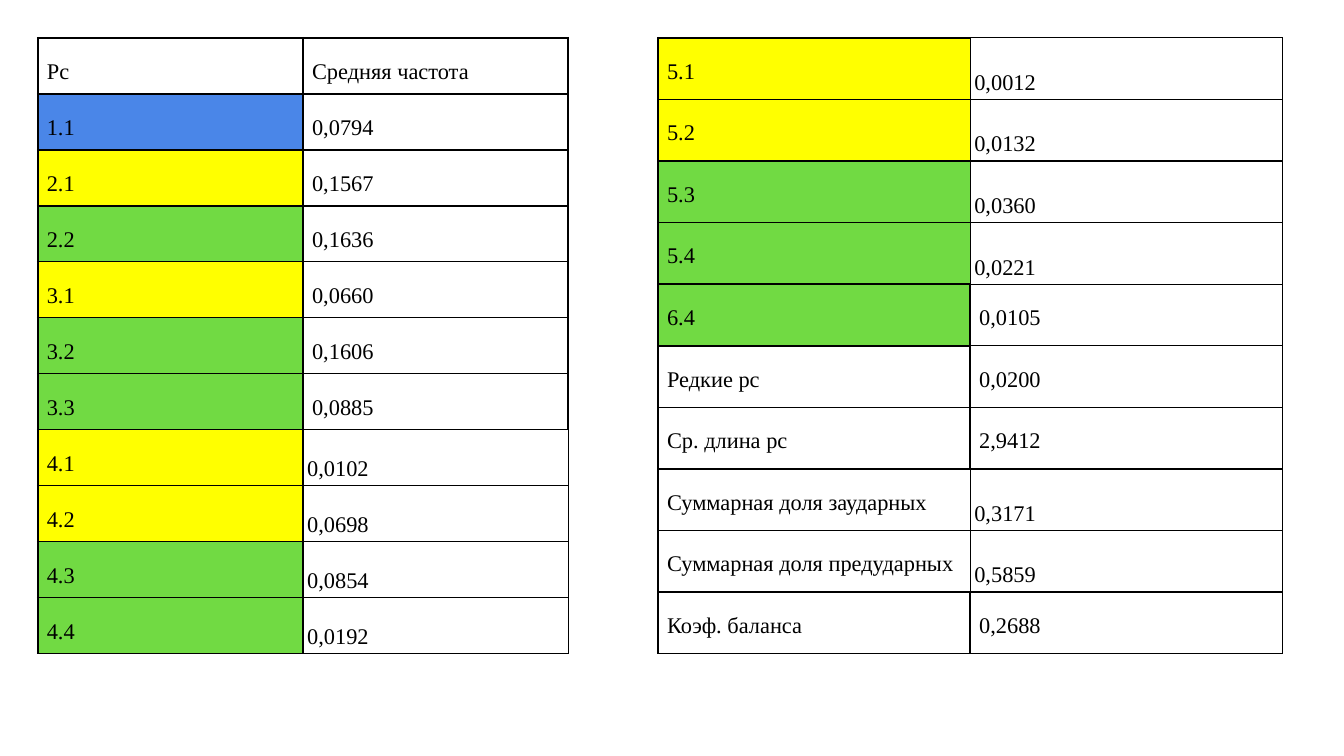
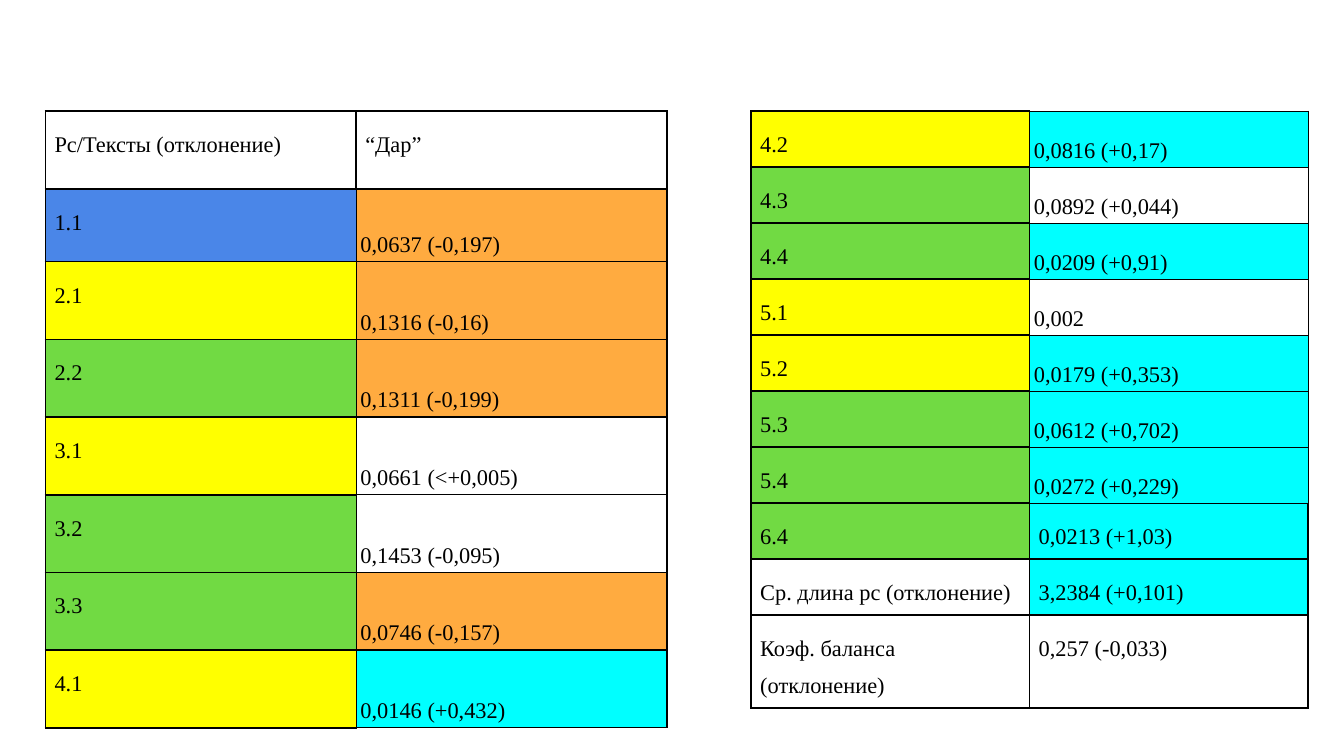
from lxml import etree
from pptx import Presentation
from pptx.dml.color import RGBColor
from pptx.enum.text import MSO_ANCHOR
from pptx.oxml.ns import qn
from pptx.util import Emu, Pt

TOP, BOTTOM = MSO_ANCHOR.TOP, MSO_ANCHOR.BOTTOM

# Scale: 192 px to the inch
PX = 914400 / 192
SLIDE_W, SLIDE_H = 1920, 1080

# Colours
BLACK = RGBColor(0x00, 0x00, 0x00)
WHITE = RGBColor(0xFF, 0xFF, 0xFF)
BLUE = RGBColor(0x4A, 0x86, 0xE8)
YELLOW = RGBColor(0xFF, 0xFF, 0x00)
GREEN = RGBColor(0x71, 0xDA, 0x43)
ORANGE = RGBColor(0xFF, 0xAB, 0x40)
CYAN = RGBColor(0x00, 0xFF, 0xFF)

LABEL_FILLS = {
    BLUE: ["1.1"],
    YELLOW: ["2.1", "3.1", "4.1", "4.2", "5.1", "5.2"],
    GREEN: ["2.2", "3.2", "3.3", "4.3", "4.4", "5.3", "5.4", "6.4"],
}
FILL_OF = {label: fill for fill, labels in LABEL_FILLS.items() for label in labels}

# Value cell kinds: low ones sit at the bottom with a thin frame
PLAIN = {"anchor": TOP, "inset": 13, "spacing": 1.5}
RULED = {**PLAIN, "thin_rules": True}
LOW = {"anchor": BOTTOM, "inset": 6, "spacing": 1.5, "low": True}
TIGHT = {**LOW, "spacing": 1.15}
THIN, THICK = Pt(0.75), Pt(1)


def px(n):
    return Emu(round(n * PX))


class Deck:
    """Holds the style and the current slide."""

    font = {"name": "Times New Roman", "size": Pt(12), "bold": False}

    def __init__(self):
        self.prs = Presentation()
        self.prs.slide_width, self.prs.slide_height = px(SLIDE_W), px(SLIDE_H)
        self.s = None

    def slide(self):
        self.s = self.prs.slides.add_slide(self.prs.slide_layouts[6])
        fill = self.s.background.fill
        fill.solid()
        fill.fore_color.rgb = WHITE

    def borders(self, cell, **widths):
        tcPr = cell._tc.get_or_add_tcPr()
        for side in "LRTB":
            ln = etree.SubElement(tcPr, qn(f"a:ln{side}"), w=str(widths[side]))
            fill = etree.SubElement(ln, qn("a:solidFill"))
            etree.SubElement(fill, qn("a:srgbClr"), val=str(BLACK))

    def cell(self, cell, text, kind, fill, widths):
        self.borders(cell, **widths)
        if fill is None:
            cell.fill.background()
        else:
            cell.fill.solid()
            cell.fill.fore_color.rgb = fill
        cell.vertical_anchor = kind["anchor"]
        for side in ("left", "right", "top", "bottom"):
            setattr(cell, f"margin_{side}", px(kind["inset"]))
        p = cell.text_frame.paragraphs[0]
        p.line_spacing = kind["spacing"]
        r = p.add_run()
        r.text = text
        for key, value in self.font.items():
            setattr(r.font, key, value)
        r.font.color.rgb = BLACK

    def table(self, x, y, col_w, heights, rows):
        sp = self.s.shapes.add_table(len(rows), 2, px(x), px(y),
                                     px(2 * col_w), px(sum(heights)))
        tbl = sp.table
        tbl.first_row = tbl.horz_banding = False
        for col in tbl.columns:
            col.width = px(col_w)
        for row, h in zip(tbl.rows, heights):
            row.height = px(h)

        kinds = [PLAIN, *(row[2] for row in rows), PLAIN]
        for i, (label, value, kind, fill) in enumerate(rows):
            above, below = kinds[i], kinds[i + 2]
            low, ruled = kind.get("low"), kind.get("thin_rules")
            side = THIN if low else THICK
            self.cell(tbl.cell(i, 0), label, PLAIN, FILL_OF.get(label),
                      {"L": THICK, "R": side, "T": THICK, "B": THICK})
            self.cell(tbl.cell(i, 1), value, kind, fill, {
                "L": side, "R": side,
                "T": THIN if low or ruled or above.get("low") else THICK,
                "B": THIN if low or ruled or below.get("low") else THICK})


# Rows: label, value, kind of value cell, fill of value cell
FREQUENCY_LEFT = [
    ("Рс", "Средняя частота", PLAIN, None),
    ("1.1", "0,0794", PLAIN, None),
    ("2.1", "0,1567", PLAIN, None),
    ("2.2", "0,1636", PLAIN, None),
    ("3.1", "0,0660", PLAIN, None),
    ("3.2", "0,1606", PLAIN, None),
    ("3.3", "0,0885", PLAIN, None),
    ("4.1", "0,0102", LOW, None),
    ("4.2", "0,0698", LOW, None),
    ("4.3", "0,0854", LOW, None),
    ("4.4", "0,0192", LOW, None),
]
FREQUENCY_RIGHT = [
    ("5.1", "0,0012", LOW, None),
    ("5.2", "0,0132", LOW, None),
    ("5.3", "0,0360", LOW, None),
    ("5.4", "0,0221", LOW, None),
    ("6.4", "0,0105", RULED, None),
    ("Редкие рс", "0,0200", RULED, None),
    ("Ср. длина рс", "2,9412", RULED, None),
    ("Суммарная доля заударных", "0,3171", TIGHT, None),
    ("Суммарная доля предударных", "0,5859", TIGHT, None),
    ("Коэф. баланса", "0,2688", PLAIN, None),
]
DEVIATION_LEFT = [
    ("Рс/Тексты (отклонение)", "“Дар”", PLAIN, None),
    ("1.1", "0,0637 (-0,197)", LOW, ORANGE),
    ("2.1", "0,1316 (-0,16)", LOW, ORANGE),
    ("2.2", "0,1311 (-0,199)", LOW, ORANGE),
    ("3.1", "0,0661 (<+0,005)", LOW, WHITE),
    ("3.2", "0,1453 (-0,095)", LOW, WHITE),
    ("3.3", "0,0746 (-0,157)", LOW, ORANGE),
    ("4.1", "0,0146 (+0,432)", LOW, CYAN),
]
DEVIATION_RIGHT = [
    ("4.2", "0,0816 (+0,17)", LOW, CYAN),
    ("4.3", "0,0892 (+0,044)", LOW, WHITE),
    ("4.4", "0,0209 (+0,91)", LOW, CYAN),
    ("5.1", "0,002", LOW, WHITE),
    ("5.2", "0,0179 (+0,353)", LOW, CYAN),
    ("5.3", "0,0612 (+0,702)", LOW, CYAN),
    ("5.4", "0,0272 (+0,229)", LOW, CYAN),
    ("6.4", "0,0213 (+1,03)", PLAIN, CYAN),
    ("Ср. длина рс (отклонение)", "3,2384 (+0,101)", PLAIN, CYAN),
    ("Коэф. баланса (отклонение)", "0,257 (-0,033)", PLAIN, None),
]


def main():
    deck = Deck()

    # Slide 1: mean frequencies
    deck.slide()
    deck.table(54, 54, 379, [80] * 11, FREQUENCY_LEFT)
    deck.table(940, 54, 446, [88] * 10, FREQUENCY_RIGHT)

    # Slide 2: deviations in one text
    deck.slide()
    deck.table(65, 159, 444, [111, 104] + [111] * 6, DEVIATION_LEFT)
    deck.table(1073, 159, 398, [80] * 10, DEVIATION_RIGHT)

    deck.prs.save("out.pptx")


if __name__ == "__main__":
    main()
